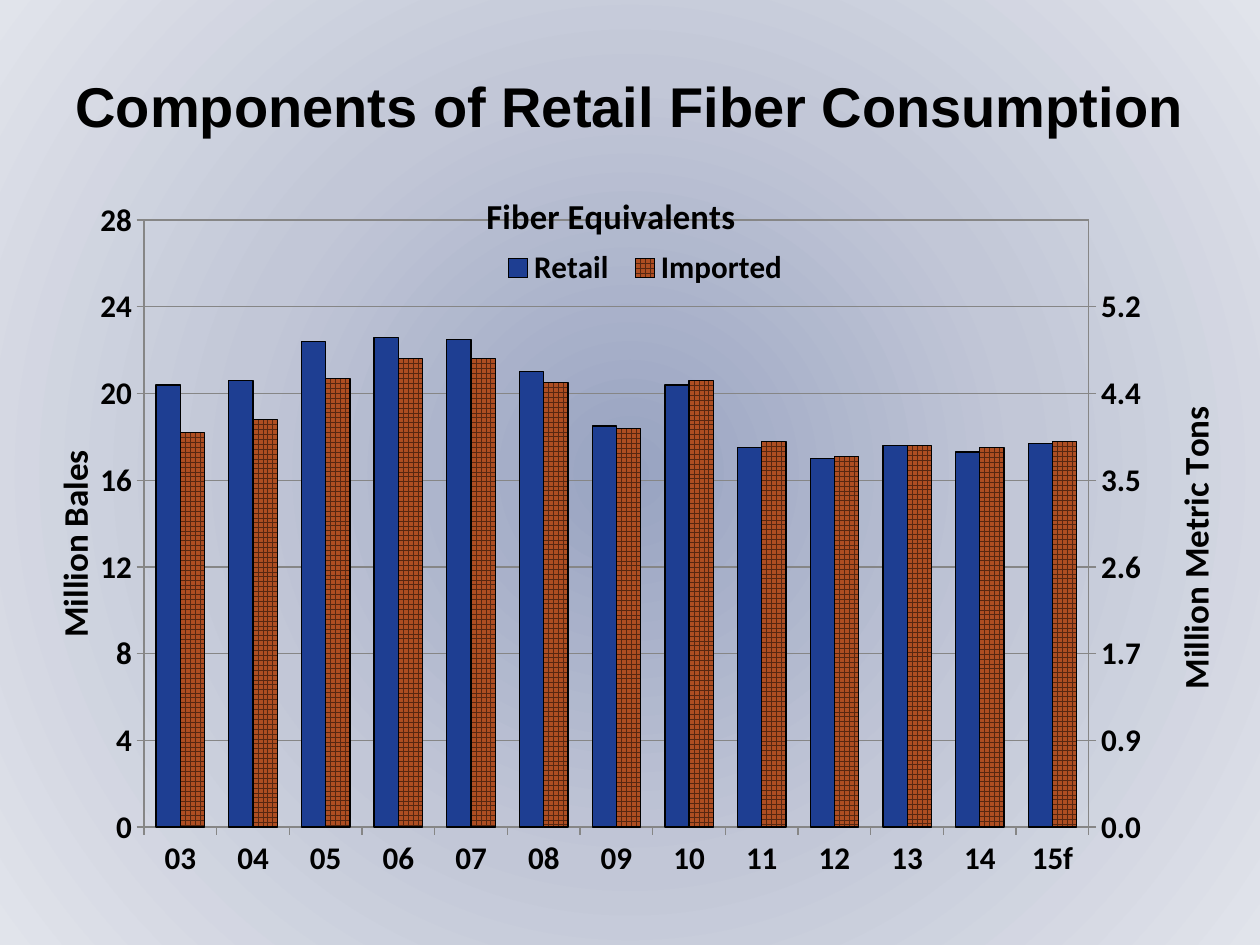
from copy import deepcopy
from lxml.etree import SubElement
from pptx import Presentation
from pptx.chart.axis import ValueAxis
from pptx.chart.data import CategoryChartData
from pptx.dml.color import RGBColor
from pptx.enum.chart import XL_CHART_TYPE, XL_LEGEND_POSITION, XL_TICK_MARK
from pptx.enum.dml import MSO_PATTERN
from pptx.enum.text import MSO_ANCHOR, PP_ALIGN
from pptx.oxml import parse_xml
from pptx.oxml.ns import nsdecls, qn
from pptx.util import Emu, Pt

PX = 914400 / 126
rgb = RGBColor.from_string


def place(item, index, **spots):
    """Give a chart part a manual layout, in shares of the chart."""
    for old in item.findall(qn("c:layout")):
        item.remove(old)
    layout = parse_xml(f"<c:layout {nsdecls('c')}/>")
    item.insert(index, layout)
    manual = SubElement(layout, qn("c:manualLayout"))
    for tag, val in spots.items():
        SubElement(manual, qn("c:" + tag), val=str(val))


def name_axis(axis, text, x, y):
    frame = axis.axis_title.text_frame
    frame.text = text
    frame.paragraphs[0].font.size = Pt(20)
    frame.paragraphs[0].font.bold = True
    body = frame._txBody.bodyPr
    body.set("rot", "-5400000")
    body.set("vert", "horz")
    place(axis.axis_title._element, 1, xMode="edge", yMode="edge", x=x, y=y)


deck = Presentation()
deck.slide_width, deck.slide_height = Emu(round(1260 * PX)), Emu(round(945 * PX))
slide = deck.slides.add_slide(deck.slide_layouts[6])

# Radial background
slide.background.fill.solid()
solid = slide._element.xpath(".//p:bgPr/a:solidFill")[0]
stops = "".join(
    f'<a:gs pos="{pos}"><a:srgbClr val="{color}"/></a:gs>'
    for pos, color in [(0, "98A3C1"), (50000, "C2C7D7"), (100000, "E1E4EB")])
solid.getparent().replace(solid, parse_xml(
    f'<a:gradFill {nsdecls("a")}><a:gsLst>{stops}</a:gsLst><a:path path="circle">'
    '<a:fillToRect l="50000" t="50000" r="50000" b="50000"/></a:path></a:gradFill>'))

# Heading
box = slide.shapes.add_textbox(*[Emu(round(n * PX)) for n in (32, 42, 1196, 126)])
frame = box.text_frame
frame.word_wrap = True
frame.vertical_anchor = MSO_ANCHOR.MIDDLE
head = frame.paragraphs[0]
head.text = "Components of Retail Fiber Consumption"
head.alignment = PP_ALIGN.CENTER
head.font.name, head.font.size, head.font.bold = "Arial", Pt(32), True
head.font.color.rgb = rgb("000000")

# Chart
data = CategoryChartData()
data.categories = [f"{year:02}" for year in range(3, 15)] + ["15f"]
data.add_series("Retail", [20.4, 20.6, 22.4, 22.6, 22.5, 21, 18.5, 20.4, 17.5, 17, 17.6, 17.3, 17.7])
data.add_series("Imported", [18.2, 18.8, 20.7, 21.6, 21.6, 20.5, 18.4, 20.6, 17.8, 17.1, 17.6, 17.5, 17.8])
data.add_series("Series 3", [4.5, 4.5, 4.9, 4.9, 4.9, 4.6, 4, 4.4, 3.8, 3.7, 3.8, 3.8, 3.9])
data.add_series("Series 4", [4, 4.1, 4.5, 4.7, 4.7, 4.5, 4, 4.5, 3.9, 3.7, 3.8, 3.8, 3.9])
chart = slide.shapes.add_chart(
    XL_CHART_TYPE.COLUMN_CLUSTERED,
    *[Emu(round(n * PX)) for n in (32, 147, 1196, 755)], data).chart
chart.font.name, chart.font.size, chart.font.bold = "Calibri", Pt(18), True
chart.font.color.rgb = rgb("000000")

plot = chart.plots[0]
plot.gap_width, plot.overlap, plot.vary_by_categories = 100, 0, False
retail, imports, *hidden = plot.series
retail.format.fill.solid()
retail.format.fill.fore_color.rgb = rgb("1E3E92")
fill = imports.format.fill
fill.patterned()
fill.pattern = MSO_PATTERN.LARGE_GRID
fill.fore_color.rgb, fill.back_color.rgb = rgb("572711"), rgb("AE4E22")
for bars in (retail, imports):
    bars.format.line.color.rgb = rgb("000000")
    bars.format.line.width = Pt(0.75)
for bars in hidden:
    bars.format.fill.background()
    bars.format.line.fill.background()

# Left and bottom axes
left, base = chart.value_axis, chart.category_axis
left.minimum_scale, left.maximum_scale, left.major_unit = 0, 28, 4
left.tick_labels.number_format = "0"
left.tick_labels.number_format_is_linked = False
for axis in (left, base):
    axis.major_tick_mark = XL_TICK_MARK.OUTSIDE
    axis.minor_tick_mark = XL_TICK_MARK.NONE
left.has_major_gridlines = True
for line in (left.format.line, base.format.line, left.major_gridlines.format.line):
    line.color.rgb = rgb("868686")
    line.width = Pt(0.75)

# Right axis: the hidden series move to a second bar plot
bar, cat, val = plot._element, base._element, left._element
bar2, cat2, val2 = deepcopy(bar), deepcopy(cat), deepcopy(val)
for group, unused in ((bar, slice(2, 4)), (bar2, slice(0, 2))):
    for ser in group.findall(qn("c:ser"))[unused]:
        group.remove(ser)
bar.addnext(bar2)
val.addnext(val2)
val2.addnext(cat2)
for item, ids in ((bar2, ("1001", "1002")), (cat2, ("1001", "1002")), (val2, ("1002", "1001"))):
    for node, number in zip(item.xpath("c:axId | c:crossAx"), ids):
        node.set("val", number)
cat2.find(qn("c:delete")).set("val", "1")
val2.find(qn("c:axPos")).set("val", "r")
val2.find(qn("c:crosses")).set("val", "max")
right = ValueAxis(val2)
right.has_major_gridlines = False
right.maximum_scale, right.major_unit = 6.1, 0.87146
right.maximum_scale = 6.100218
right.tick_labels.number_format = "#,##0.0"
name_axis(left, "Million Bales", 0.01, 0.39)
name_axis(right, "Million Metric Tons", 0.96, 0.33)

# Title, legend and plot area
chart.has_title = True
title = chart.chart_title
title.text_frame.text = "Fiber Equivalents"
title.text_frame.paragraphs[0].font.size = Pt(20)
title.text_frame.paragraphs[0].font.bold = True
place(title._element, 1, xMode="edge", yMode="edge", x=0.38, y=0.05)
chart.has_legend = True
legend = chart.legend
legend.position = XL_LEGEND_POSITION.TOP
legend.include_in_layout = False
for spot, idx in ((1, 2), (2, 3)):
    legend._element.insert(spot, parse_xml(
        f'<c:legendEntry {nsdecls("c")}><c:idx val="{idx}"/><c:delete val="1"/></c:legendEntry>'))
place(legend._element, 3, xMode="edge", yMode="edge", x=0.39, y=0.13, w=0.26, h=0.06)
place(bar.getparent(), 0, layoutTarget="inner", xMode="edge", yMode="edge",
      x=0.095, y=0.097, w=0.801, h=0.804)

deck.save("out.pptx")
